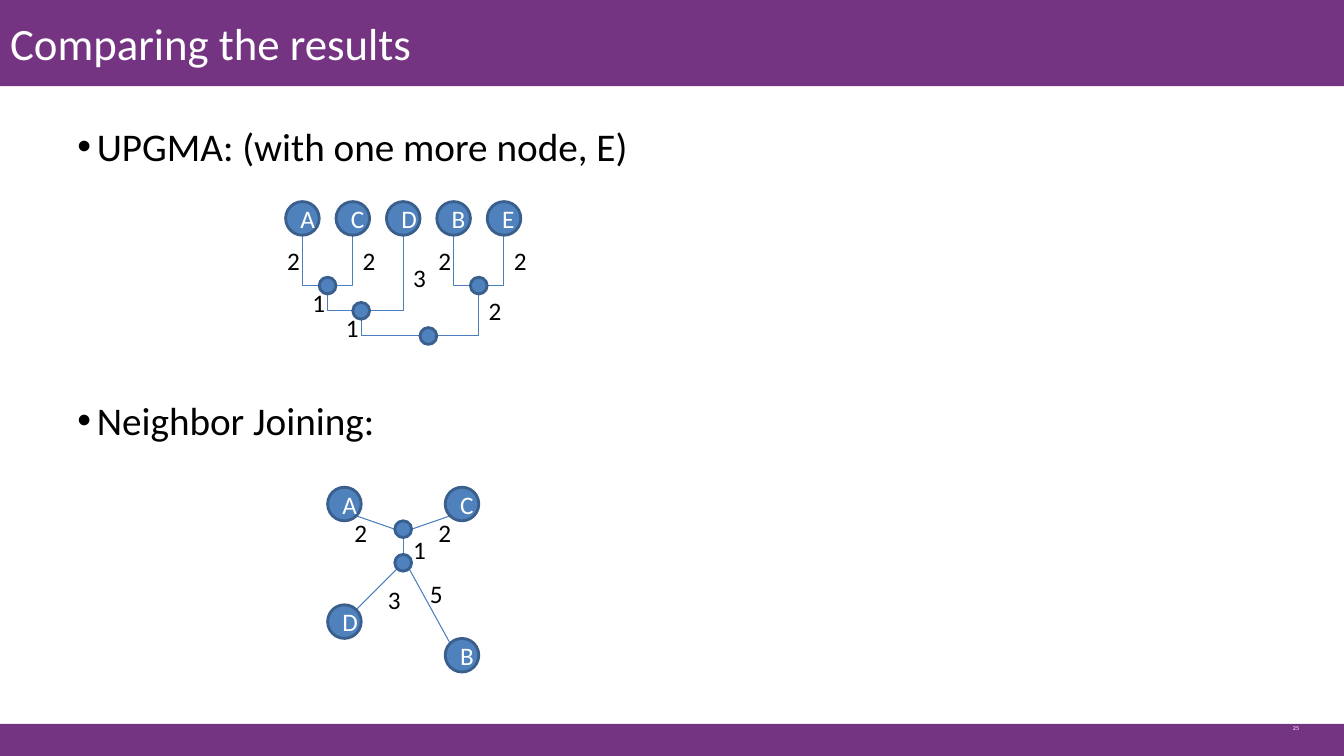
from math import hypot

from pptx import Presentation
from pptx.dml.color import RGBColor
from pptx.enum.shapes import MSO_CONNECTOR, MSO_SHAPE
from pptx.enum.text import MSO_ANCHOR, MSO_AUTO_SIZE, PP_ALIGN
from pptx.oxml.ns import qn
from pptx.util import Pt

RECT, OVAL = MSO_SHAPE.RECTANGLE, MSO_SHAPE.OVAL
STRAIGHT, ELBOW = MSO_CONNECTOR.STRAIGHT, MSO_CONNECTOR.ELBOW
TOP, MIDDLE = MSO_ANCHOR.TOP, MSO_ANCHOR.MIDDLE
LEFT, CENTER = PP_ALIGN.LEFT, PP_ALIGN.CENTER

TITLE = "Comparing the results"
BULLETS = ["UPGMA: (with one more node, E)", "Neighbor Joining:"]
PAGE = "25"

# Tree coordinates are centres on a grid of GRID points.
GRID = 6
LEAF_R, NODE_R = 2, 1

UPGMA_LEAVES = {name: (36 + 6 * i, 26) for i, name in enumerate("ACDBE")}
UPGMA_NODES = {"AC": (39, 34), "BE": (57, 34), "ACD": (43, 37), "root": (51, 40)}
# parent, child, length, top of the length label
UPGMA_BRANCHES = [
    ("AC", "A", "2", 29), ("AC", "C", "2", 29),
    ("BE", "B", "2", 29), ("BE", "E", "2", 29),
    ("ACD", "AC", "1", 34), ("ACD", "D", "3", 31),
    ("root", "ACD", "1", 37), ("root", "BE", "2", 35),
]

NJ_LEAVES = {"A": (41, 60), "C": (55, 60), "B": (55, 78), "D": (41, 74)}
NJ_NODES = {"upper": (48, 63), "lower": (48, 67)}
# from, direction it leaves in, to, direction it arrives from, length, label corner
NJ_BRANCHES = [
    ("A", (1, 1), "upper", (-1, 0), "2", (41, 61)),
    ("C", (-1, 1), "upper", (1, 0), "2", (51, 61)),
    ("upper", (0, 1), "lower", (0, -1), "1", (48, 63)),
    ("B", (-1, -1), "lower", (1, 1), "5", (50, 68.2)),
    ("D", (1, -1), "lower", (-1, 1), "3", (45, 69)),
]

THEME = {
    "font": "Calibri",
    "bar": RGBColor.from_string("743481"),
    "light": RGBColor.from_string("FFFFFF"),
    "dark": RGBColor.from_string("000000"),
    "node": RGBColor.from_string("4F81BD"),
    "outline": RGBColor.from_string("3A5F8C"),
    "nj_outline": RGBColor.from_string("376092"),
    "branch": RGBColor.from_string("4B7EBC"),
    "title": 32, "body": 28, "label": 18, "page": 4.3,
}


def place(shape, x, y, w, h):
    shape.left, shape.top, shape.width, shape.height = Pt(x), Pt(y), Pt(w), Pt(h)


def style(p, size, color, align=LEFT):
    p.alignment = align
    for r in p.runs:
        r.font.name = THEME["font"]
        r.font.size = Pt(size)
        r.font.color.rgb = color


def add_bar(s, y, h):
    bar = s.shapes.add_shape(RECT, 0, Pt(y), prs.slide_width, Pt(h))
    bar.shadow.inherit = False
    bar.fill.solid()
    bar.fill.fore_color.rgb = THEME["bar"]
    bar.line.fill.background()
    s.shapes._spTree.insert(2, bar._element)  # behind the placeholders


def add_disc(shapes, center, radius, text="", outline="outline"):
    x, y = center
    disc = shapes.add_shape(OVAL, Pt((x - radius) * GRID), Pt((y - radius) * GRID),
                            Pt(2 * radius * GRID), Pt(2 * radius * GRID))
    disc.shadow.inherit = False
    disc.fill.solid()
    disc.fill.fore_color.rgb = THEME["node"]
    disc.line.color.rgb = THEME[outline]
    disc.line.width = Pt(2)
    if text:
        tf = disc.text_frame
        tf.text = text
        tf.vertical_anchor = MIDDLE
        style(tf.paragraphs[0], THEME["label"], THEME["light"], CENTER)


def add_branch(shapes, kind, start, end):
    c = shapes.add_connector(kind, *(Pt(v * GRID) for v in start + end))
    c.line.color.rgb = THEME["branch"]
    c.line.width = Pt(0.75)
    pr = c._element.spPr
    if kind == ELBOW:  # one corner: across, then up
        pr.find(qn("a:prstGeom")).set("prst", "bentConnector2")
    pr.append(pr.makeelement(qn("a:effectLst"), {}))


def add_text(shapes, text, x, y, w, h, size, color, align=LEFT, anchor=TOP, wrap=True):
    tf = shapes.add_textbox(Pt(x), Pt(y), Pt(w), Pt(h)).text_frame
    tf.word_wrap = wrap
    tf.vertical_anchor = anchor
    tf.text = text
    style(tf.paragraphs[0], size, color, align)


def rim(center, radius, direction):
    """Point on a disc's edge in the given direction."""
    scale = radius / hypot(*direction)
    return tuple(c + scale * d for c, d in zip(center, direction))


def add_upgma(s):
    shapes = s.shapes.add_group_shape().shapes
    centers = {**UPGMA_LEAVES, **UPGMA_NODES}
    for parent, child, length, top in UPGMA_BRANCHES:
        x = centers[child][0]
        side = -1 if x < centers[parent][0] else 1
        radius = LEAF_R if child in UPGMA_LEAVES else NODE_R
        add_branch(shapes, ELBOW, rim(centers[parent], NODE_R, (side, 0)),
                   rim(centers[child], radius, (0, 1)))
        label_x = x - 3 if side < 0 else x
        add_text(shapes, length, label_x * GRID, top * GRID, 18, 24,
                 THEME["label"], THEME["dark"], CENTER, MIDDLE)
    for name, center in UPGMA_LEAVES.items():
        add_disc(shapes, center, LEAF_R, name)
    for center in UPGMA_NODES.values():
        add_disc(shapes, center, NODE_R)


def add_neighbor_joining(s):
    shapes = s.shapes.add_group_shape().shapes
    centers = {**NJ_LEAVES, **NJ_NODES}
    for a, a_dir, b, b_dir, length, (x, y) in NJ_BRANCHES:
        radius = LEAF_R if a in NJ_LEAVES else NODE_R
        add_branch(shapes, STRAIGHT, rim(centers[a], radius, a_dir),
                   rim(centers[b], NODE_R, b_dir))
        add_text(shapes, length, x * GRID, y * GRID, 24, 29,
                 THEME["label"], THEME["dark"], wrap=False)
    for name, center in NJ_LEAVES.items():
        add_disc(shapes, center, LEAF_R, name)
    for center in NJ_NODES.values():
        add_disc(shapes, center, NODE_R, outline="nj_outline")


prs = Presentation()
prs.slide_width, prs.slide_height = Pt(960), Pt(540)
s = prs.slides.add_slide(prs.slide_layouts[1])

add_bar(s, -0.5, 62)
add_bar(s, 517, 23.5)

title = s.shapes.title
place(title, 0, -0.5, 750, 62)
tf = title.text_frame
tf.text = TITLE
tf.auto_size = MSO_AUTO_SIZE.NONE
tf.vertical_anchor = MIDDLE
style(tf.paragraphs[0], THEME["title"], THEME["light"])

body = s.placeholders[1]
place(body, 48, 84, 864, 398)
tf = body.text_frame
tf.text = "\n".join(BULLETS)
tf.auto_size = MSO_AUTO_SIZE.NONE
for p, gap in zip(tf.paragraphs, (0, 162)):
    p.space_before = Pt(gap)
    pr = p._p.get_or_add_pPr()
    pr.set("marL", str(Pt(14)))
    pr.set("indent", str(-Pt(14)))
    style(p, THEME["body"], THEME["dark"])

add_text(s.shapes, PAGE, 916.5, 514, 47, 29, THEME["page"], THEME["light"])
add_upgma(s)
add_neighbor_joining(s)

prs.save("out.pptx")
